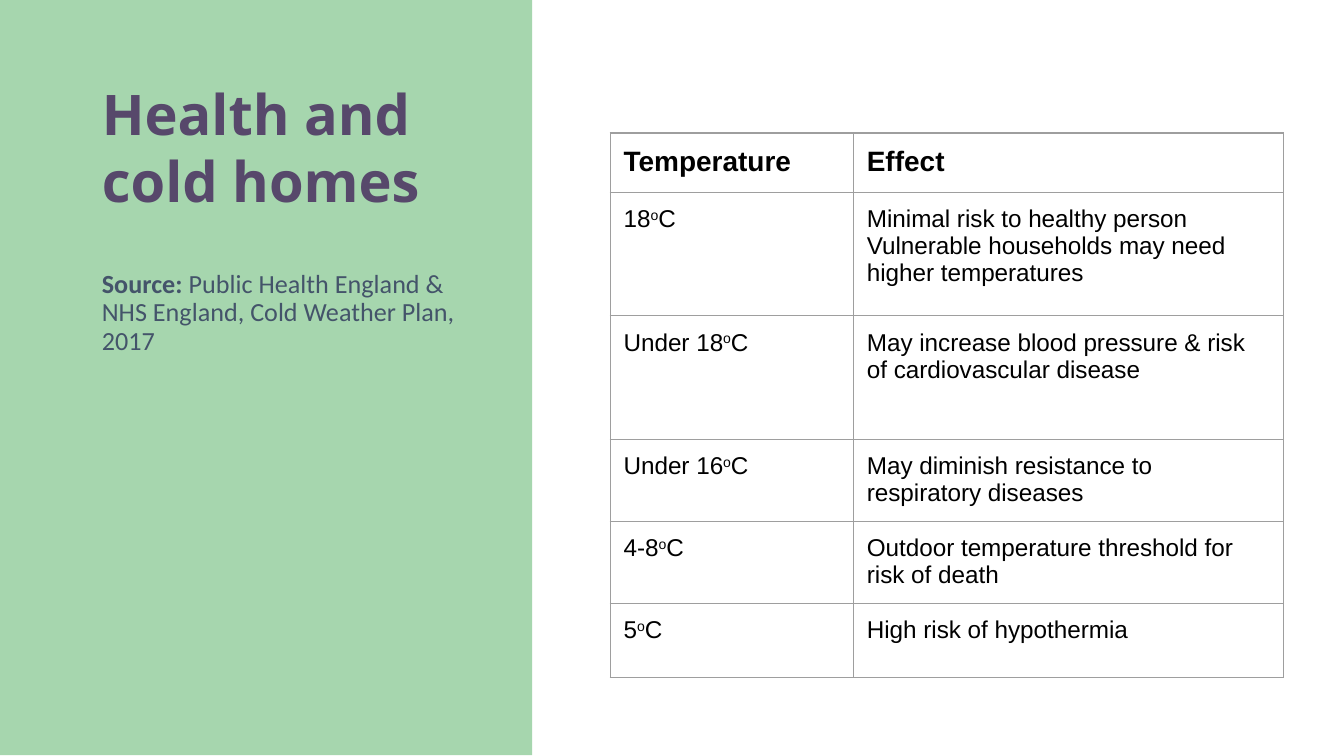
from lxml.etree import SubElement
from pptx import Presentation
from pptx.dml.color import RGBColor
from pptx.enum.shapes import MSO_SHAPE
from pptx.enum.text import MSO_ANCHOR
from pptx.oxml.ns import qn
from pptx.util import Inches, Pt

GREEN = RGBColor(0xA6, 0xD6, 0xAE)
PURPLE = RGBColor(0x57, 0x48, 0x6B)
SLATE = RGBColor(0x44, 0x54, 0x6A)
BLACK = RGBColor(0, 0, 0)
GREY = RGBColor(0x9E, 0x9E, 0x9E)

TITLE = {"name": "Open Sans", "size": Pt(30), "bold": True, "color": PURPLE}
SOURCE = {"name": "Calibri", "size": Pt(14), "bold": False, "color": SLATE}
HEADER = {"name": "Arial", "size": Pt(15), "bold": True, "color": BLACK}
BODY = {"name": "Arial", "size": Pt(13), "bold": False, "color": BLACK}

COLUMN_WIDTHS = [1.81, 3.2]
ROW_HEIGHTS = [0.44, 0.92, 0.92, 0.61, 0.61, 0.55]
EFFECTS = [
    ("18", ["Minimal risk to healthy person",
            "Vulnerable households may need higher temperatures"]),
    ("Under 18", ["May increase blood pressure & risk of cardiovascular disease"]),
    ("Under 16", ["May diminish resistance to respiratory diseases"]),
    ("4-8", ["Outdoor temperature threshold for risk of death"]),
    ("5", ["High risk of hypothermia"]),
]


def add_run(p, text, style):
    r = p.add_run()
    r.text = text
    for key, value in style.items():
        if key == "color":
            r.font.color.rgb = value
        else:
            setattr(r.font, key, value)
    return r


def set_margins(target, top=0.1, bottom=0.1):
    margins = {"left": 0.1, "right": 0.1, "top": top, "bottom": bottom}
    for side, value in margins.items():
        setattr(target, f"margin_{side}", Inches(value))


def add_text(s, left, top, width, height, runs, margin_top=0.1, line_spacing=1.0):
    box = s.shapes.add_textbox(Inches(left), Inches(top), Inches(width), Inches(height))
    tf = box.text_frame
    tf.word_wrap = True
    tf.vertical_anchor = MSO_ANCHOR.TOP
    set_margins(tf, margin_top)
    p = tf.paragraphs[0]
    p.line_spacing = line_spacing
    for text, style in runs:
        add_run(p, text, style)


def add_panel(s, left, top, width, height, color):
    sp = s.shapes.add_shape(MSO_SHAPE.RECTANGLE, Inches(left), Inches(top),
                            Inches(width), Inches(height))
    sp.shadow.inherit = False
    sp.fill.solid()
    sp.fill.fore_color.rgb = color
    sp.line.fill.background()


def format_cell(cell):
    # The smaller bottom margin lets two lines fit the row height
    set_margins(cell, bottom=0.07)
    tcPr = cell._tc.get_or_add_tcPr()
    for side in ("lnL", "lnR", "lnT", "lnB"):
        ln = SubElement(tcPr, qn(f"a:{side}"), w=str(Pt(0.75)))
        fill = SubElement(ln, qn("a:solidFill"))
        SubElement(fill, qn("a:srgbClr"), val=str(GREY))
    cell.fill.background()


def fill_temperature(cell, degrees):
    p = cell.text_frame.paragraphs[0]
    add_run(p, degrees, BODY)
    r = add_run(p, "o", BODY)
    r._r.get_or_add_rPr().set("baseline", "30000")
    add_run(p, "C", BODY)


def fill_effect(cell, lines):
    tf = cell.text_frame
    for i, line in enumerate(lines):
        p = tf.add_paragraph() if i else tf.paragraphs[0]
        add_run(p, line, BODY)


def add_effects_table(s, left, top):
    table = s.shapes.add_table(
        len(ROW_HEIGHTS), len(COLUMN_WIDTHS), Inches(left), Inches(top),
        Inches(sum(COLUMN_WIDTHS)), Inches(sum(ROW_HEIGHTS))).table
    table.first_row = table.horz_banding = False
    for column, width in zip(table.columns, COLUMN_WIDTHS):
        column.width = Inches(width)
    for row, height in zip(table.rows, ROW_HEIGHTS):
        row.height = Inches(height)
    for cell in table.iter_cells():
        format_cell(cell)
    for col, heading in enumerate(("Temperature", "Effect")):
        add_run(table.cell(0, col).text_frame.paragraphs[0], heading, HEADER)
    for row, (degrees, lines) in enumerate(EFFECTS, start=1):
        fill_temperature(table.cell(row, 0), degrees)
        fill_effect(table.cell(row, 1), lines)


def main():
    prs = Presentation()
    # Widescreen, 16:9
    prs.slide_width = Inches(10)
    prs.slide_height = prs.slide_width * 9 // 16
    s = prs.slides.add_slide(prs.slide_layouts[6])

    # Left panel with title and source
    add_panel(s, 0, -0.01, 3.96, 5.63, GREEN)
    add_text(s, 0.66, 0.49, 2.84, 1.22, [("Health and cold homes", TITLE)])
    add_text(s, 0.66, 1.48, 2.84, 3.68, [
        ("Source:", {**SOURCE, "bold": True}),
        (" Public Health England & NHS England, Cold Weather Plan, 2017", SOURCE),
    ], margin_top=0.54, line_spacing=0.9)

    # Temperature effects
    add_effects_table(s, 4.54, 0.99)

    prs.save("out.pptx")


if __name__ == "__main__":
    main()
